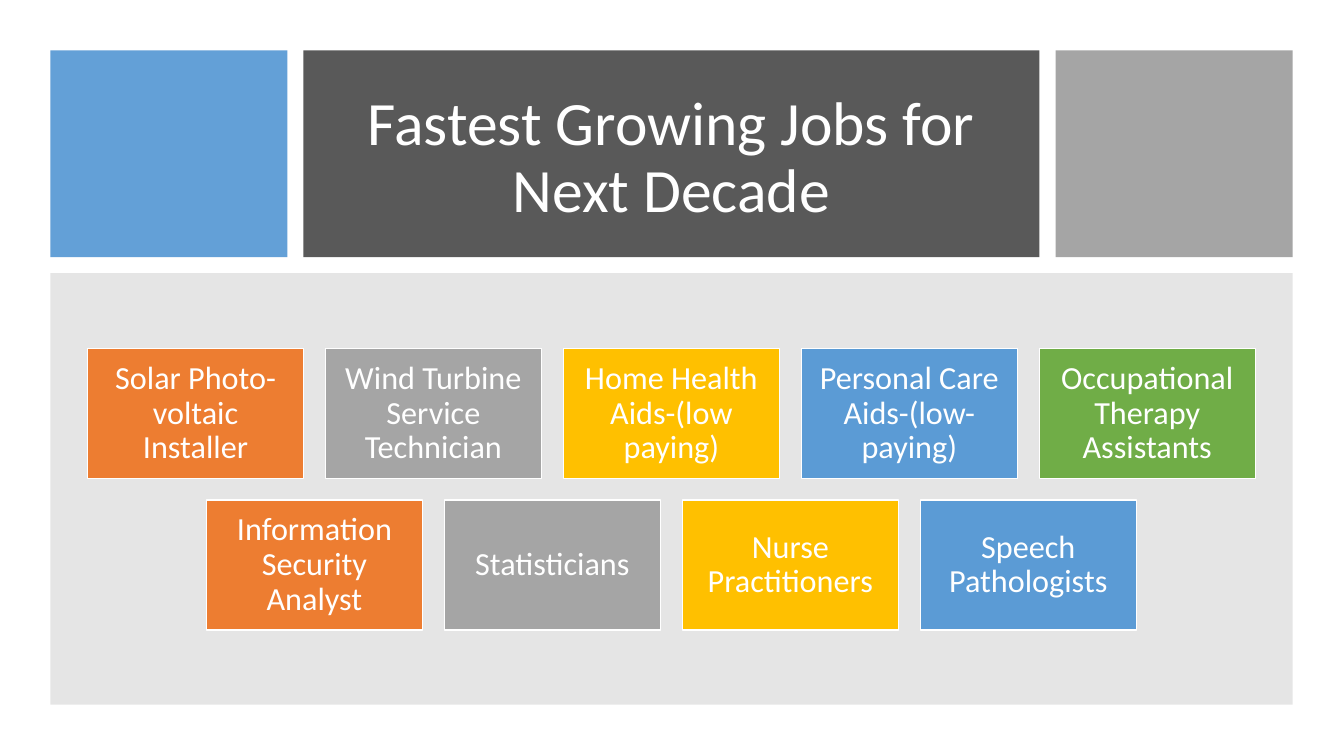
from dataclasses import dataclass
from itertools import cycle

from lxml import etree
from pptx import Presentation
from pptx.dml.color import RGBColor
from pptx.enum.shapes import MSO_SHAPE
from pptx.enum.text import MSO_ANCHOR, MSO_AUTO_SIZE, PP_ALIGN
from pptx.oxml.ns import qn
from pptx.util import Inches, Pt

RECTANGLE = MSO_SHAPE.RECTANGLE
MIDDLE = MSO_ANCHOR.MIDDLE
NO_FIT = MSO_AUTO_SIZE.NONE
CENTER = PP_ALIGN.CENTER
TITLE_ONLY = 5


@dataclass(frozen=True)
class Theme:
    font: str = "Calibri"
    title_size: int = 44
    job_size: int = 23
    white: str = "FFFFFF"
    blue: str = "5B9BD5"
    gray: str = "A5A5A5"
    banner: str = "595959"
    panel: str = "808080"
    jobs: tuple = ("ED7D31", "A5A5A5", "FFC000", "5B9BD5", "70AD47")


THEME = Theme()

# Page frame, in inches
WIDTH, HEIGHT = 13.33, 7.5
MARGIN, GUTTER = 0.5, 0.16
SIDE_WIDTH, HEADER_HEIGHT = 2.35, 2.05
CONTENT_WIDTH, PANEL_HEIGHT = 12.32, 4.28

# Job grid, in inches
JOB_WIDTH, JOB_HEIGHT = 2.14, 1.29
COLUMN_STEP, ROW_STEP = 2.36, 1.5
GRID_TOP = 3.46

TITLE = "Fastest Growing Jobs for Next Decade"
JOB_ROWS = (
    (
        "Solar Photo-voltaic Installer",
        "Wind Turbine Service Technician",
        "Home Health Aids-(low paying)",
        "Personal Care Aids-(low-paying)",
        "Occupational Therapy Assistants",
    ),
    (
        "Information Security Analyst",
        "Statisticians",
        "Nurse Practitioners",
        "Speech Pathologists",
    ),
)


def write_text(box, text, *, size, color=THEME.white, inset=0.1, inset_y=0.1):
    frame = box.text_frame
    frame.word_wrap = True
    frame.auto_size = NO_FIT
    frame.vertical_anchor = MIDDLE
    frame.margin_left = frame.margin_right = Inches(inset)
    frame.margin_top = frame.margin_bottom = Inches(inset_y)
    para = frame.paragraphs[0]
    para.alignment = CENTER
    para.line_spacing = 0.9
    para.space_before = Pt(0)
    span = para.add_run()
    span.text = text
    span.font.name = THEME.font
    span.font.size = Pt(size)
    span.font.color.rgb = RGBColor.from_string(color)


def add_block(page, left, top, width, height, color, *, opacity=100, outline=None):
    box = page.shapes.add_shape(
        RECTANGLE, Inches(left), Inches(top), Inches(width), Inches(height))
    box.shadow.inherit = False
    box.fill.solid()
    box.fill.fore_color.rgb = RGBColor.from_string(color)
    if opacity < 100:
        tint = box.element.spPr.find(".//" + qn("a:srgbClr"))
        etree.SubElement(tint, qn("a:alpha"), val=str(opacity * 1000))
    if outline:
        box.line.color.rgb = RGBColor.from_string(outline)
        box.line.width = Pt(1)
    else:
        box.line.fill.background()
    return box


def add_header(page):
    banner_left = MARGIN + SIDE_WIDTH + GUTTER
    banner_width = CONTENT_WIDTH - 2 * (SIDE_WIDTH + GUTTER)
    right = MARGIN + CONTENT_WIDTH - SIDE_WIDTH
    add_block(page, MARGIN, MARGIN, SIDE_WIDTH, HEADER_HEIGHT, THEME.blue, opacity=95)
    add_block(page, banner_left, MARGIN, banner_width, HEADER_HEIGHT, THEME.banner)
    add_block(page, right, MARGIN, SIDE_WIDTH, HEADER_HEIGHT, THEME.gray)

    # Title sits in front of its banner
    title = page.shapes.title
    title.left, title.top = Inches(3.33), Inches(0.8)
    title.width, title.height = Inches(6.66), Inches(1.56)
    write_text(title, TITLE, size=THEME.title_size, inset_y=0.05)
    title.element.getparent().append(title.element)


def add_jobs(page):
    panel_top = MARGIN + HEADER_HEIGHT + GUTTER
    add_block(page, MARGIN, panel_top, CONTENT_WIDTH, PANEL_HEIGHT,
              THEME.panel, opacity=20)

    # Each row is centred in the panel
    center = MARGIN + CONTENT_WIDTH / 2
    colors = cycle(THEME.jobs)
    for row, names in enumerate(JOB_ROWS):
        row_width = (len(names) - 1) * COLUMN_STEP + JOB_WIDTH
        for column, name in enumerate(names):
            left = center - row_width / 2 + column * COLUMN_STEP
            box = add_block(page, left, GRID_TOP + row * ROW_STEP, JOB_WIDTH,
                            JOB_HEIGHT, next(colors), outline=THEME.white)
            write_text(box, name, size=THEME.job_size)


def main():
    deck = Presentation()
    deck.slide_width, deck.slide_height = Inches(WIDTH), Inches(HEIGHT)
    page = deck.slides.add_slide(deck.slide_layouts[TITLE_ONLY])
    add_header(page)
    add_jobs(page)
    deck.save("out.pptx")


if __name__ == "__main__":
    main()
